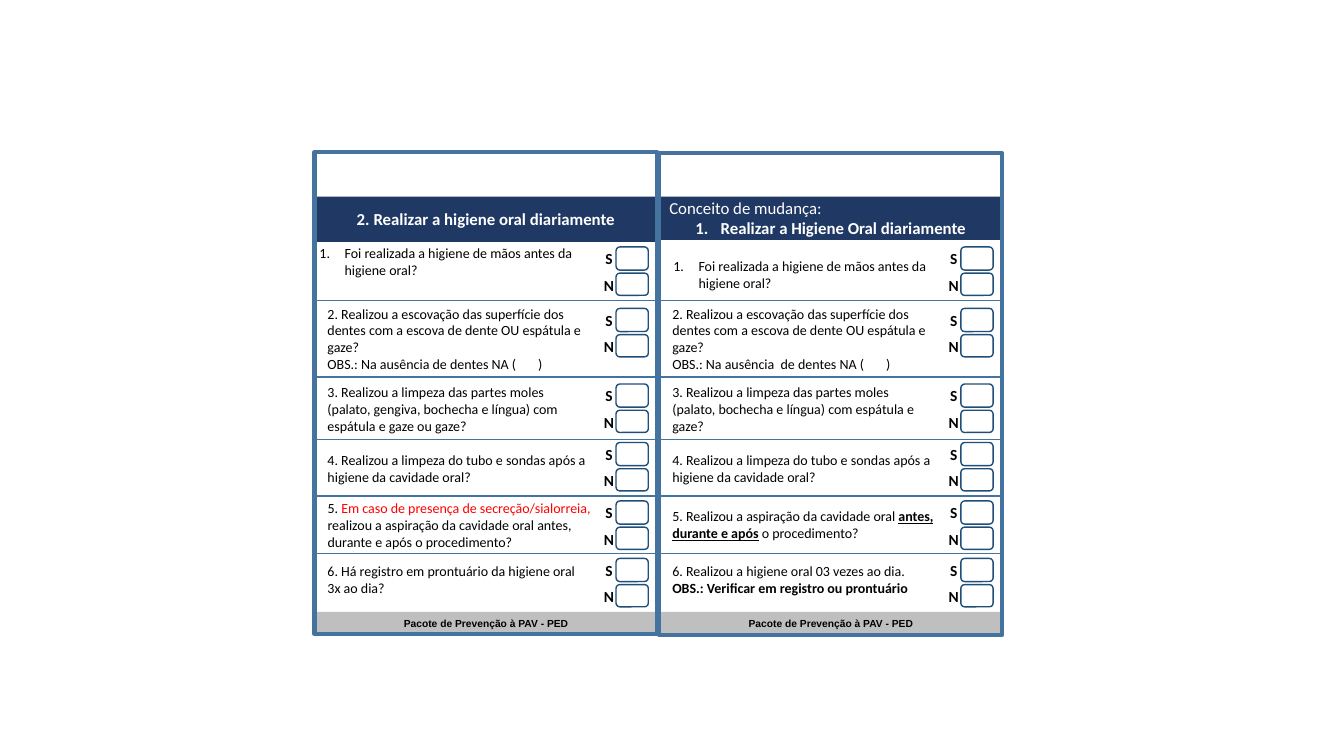
import pptx
import pptx.util
import pptx.dml.color
import pptx.enum.shapes
import pptx.enum.text
import pptx.oxml
import pptx.oxml.ns

Inches = pptx.util.Inches
Pt = pptx.util.Pt
Shape = pptx.enum.shapes.MSO_SHAPE
Align = pptx.enum.text.PP_ALIGN
Anchor = pptx.enum.text.MSO_ANCHOR


def color(code):
    return pptx.dml.color.RGBColor.from_string(code)


def put(para, text, size=10, font="Calibri", ink="000000", bold=False, under=False):
    run = para.add_run()
    run.text = text
    run.font.size = Pt(size)
    run.font.name = font
    run.font.color.rgb = color(ink)
    run.font.bold = bold
    run.font.underline = under


def number(para):
    props = para._p.get_or_add_pPr()
    props.set("marL", str(Inches(0.25)))
    props.set("indent", str(-Inches(0.25)))
    mark = pptx.oxml.parse_xml(
        f'<a:buAutoNum {pptx.oxml.ns.nsdecls("a")} type="arabicPeriod"/>')
    props.append(mark)


class Card:
    navy = "203864"
    steel = "43739E"
    edge = "1F4E79"
    gray = "BFBFBF"

    def __init__(self, slide, left):
        self.shapes = slide.shapes
        self.left = left

    def place(self, x, y, w, h):
        return [Inches(v) for v in (self.left + x, y, w, h)]

    def fill(self, frame, paras, align=Align.LEFT, **style):
        frame.word_wrap = True
        frame.vertical_anchor = Anchor.MIDDLE
        for i, runs in enumerate(paras):
            para = frame.paragraphs[0] if i == 0 else frame.add_paragraph()
            para.alignment = align
            for text, extra in runs:
                look = {**style, **extra}
                if look.pop("auto", False):
                    number(para)
                para.alignment = look.pop("align", align)
                put(para, text, **look)

    def box(self, kind, x, y, w, h, back=None, line=None, width=1):
        shape = self.shapes.add_shape(kind, *self.place(x, y, w, h))
        shape.shadow.inherit = False
        if back:
            shape.fill.solid()
            shape.fill.fore_color.rgb = color(back)
        else:
            shape.fill.background()
        if line:
            shape.line.color.rgb = color(line)
            shape.line.width = Pt(width)
        else:
            shape.line.fill.background()
        return shape

    def band(self, y, h, back, paras, **style):
        shape = self.box(Shape.RECTANGLE, 0, y, 3.4, h, back=back)
        self.fill(shape.text_frame, paras, **style)

    def text(self, x, y, w, h, paras, inset=None, **style):
        frame = self.shapes.add_textbox(*self.place(x, y, w, h)).text_frame
        if inset is not None:
            frame.margin_left = frame.margin_right = Inches(inset)
            frame.margin_top = frame.margin_bottom = Inches(inset)
        self.fill(frame, paras, **style)

    def rule(self, y):
        x, y, w, _ = self.place(0, y, 3.39, 0)
        line = self.shapes.add_connector(
            pptx.enum.shapes.MSO_CONNECTOR.STRAIGHT, x, y, x + w, y)
        line.line.color.rgb = color(self.steel)
        line.line.width = Pt(1)
        props = line._element.spPr
        props.append(props.makeelement(pptx.oxml.ns.qn("a:effectLst"), {}))

    def checks(self, y):
        for label, drop, h, shift, tall in (
                ("S", 0, 0.23, 0.03, 0.17), ("N", 0.26, 0.22, 0.31, 0.14)):
            self.box(Shape.ROUNDED_RECTANGLE, 2.99, y + drop, 0.32, h, line=self.edge)
            self.text(2.8, y + shift, 0.24, tall, [[(label, {})]], inset=0,
                      align=Align.CENTER, size=11, bold=True)

    def frame(self, y):
        self.box(Shape.RECTANGLE, 0, y, 3.4, 4.78, line=self.steel, width=3)


TICKS = (2.45, 3.06, 3.81, 4.39, 4.97, 5.54)
RULES = (2.98, 3.74, 4.36, 4.92, 5.49)
ROWS = ((3, 0.72), (3.8, 0.51), (4.39, 0.51), (4.95, 0.51), (5.49, 0.51))
HANDS = "Foi realizada a higiene de mãos antes da higiene oral?"
BRUSH = ("2. Realizou a escovação das superfície dos dentes com a escova de dente "
         "OU espátula e gaze?")
TUBE = "4. Realizou a limpeza do tubo e sondas após a higiene da cavidade oral?"

CARDS = (
    dict(left=3.12, top=1.51, head=0.45, first=(-0.05, 2.34), wide=2.91,
         title=[[("2. Realizar a higiene oral diariamente",
                  dict(bold=True, align=Align.CENTER))]],
         asks=(
             [[(BRUSH, {})], [("OBS.: Na ausência de dentes NA (       )", {})]],
             [[("3. Realizou a limpeza das partes moles (palato, gengiva, bochecha "
                "e língua) com espátula e gaze ou gaze?", {})]],
             [[(TUBE, {})]],
             [[("5. ", {}),
               ("Em caso de presença de secreção/sialorreia, ", dict(ink="FF0000")),
               ("realizou a aspiração da cavidade oral antes, durante e após o "
                "procedimento?", {})]],
             [[("6. Há registro em prontuário da higiene oral 3x ao dia?", {})]])),
    dict(left=6.54, top=1.52, head=0.43, first=(0.04, 2.47), wide=2.8,
         title=[[("Conceito de mudança:", {})],
                [("Realizar a Higiene Oral diariamente",
                  dict(bold=True, align=Align.CENTER, auto=True))]],
         asks=(
             [[(BRUSH, {})], [("OBS.: Na ausência  de dentes NA (       )", {})]],
             [[("3. Realizou a limpeza das partes moles (palato, bochecha e língua) "
                "com espátula e gaze?", {})]],
             [[(TUBE, {})]],
             [[("5. Realizou a aspiração da cavidade oral ", {}),
               ("antes, durante e após", dict(bold=True, under=True)),
               (" o procedimento?", {})]],
             [[("6. Realizou a higiene oral 03 vezes ao dia.", {})],
              [("OBS.: Verificar em registro ou prontuário", dict(bold=True))]])),
)


def main():
    deck = pptx.Presentation()
    deck.slide_width = Inches(13.33)
    deck.slide_height = Inches(7.5)
    slide = deck.slides.add_slide(deck.slide_layouts[6])
    for data in CARDS:
        card = Card(slide, data["left"])
        card.band(6.07, 0.22, Card.gray, [[("Pacote de Prevenção à PAV - PED", {})]],
                  align=Align.CENTER, size=7.3, font="Arial", bold=True)
        card.band(1.95, data["head"], Card.navy, data["title"], size=12, ink="FFFFFF")
        card.text(*data["first"], 2.8, 0.51, [[(HANDS, dict(auto=True))]])
        for row, ((y, h), ask) in enumerate(zip(ROWS, data["asks"])):
            card.text(0.03, y, data["wide"] if row == 3 else 2.8, h, ask)
        for y in TICKS:
            card.checks(y)
        for y in RULES:
            card.rule(y)
        card.frame(data["top"])
    deck.save("out.pptx")


if __name__ == "__main__":
    main()
